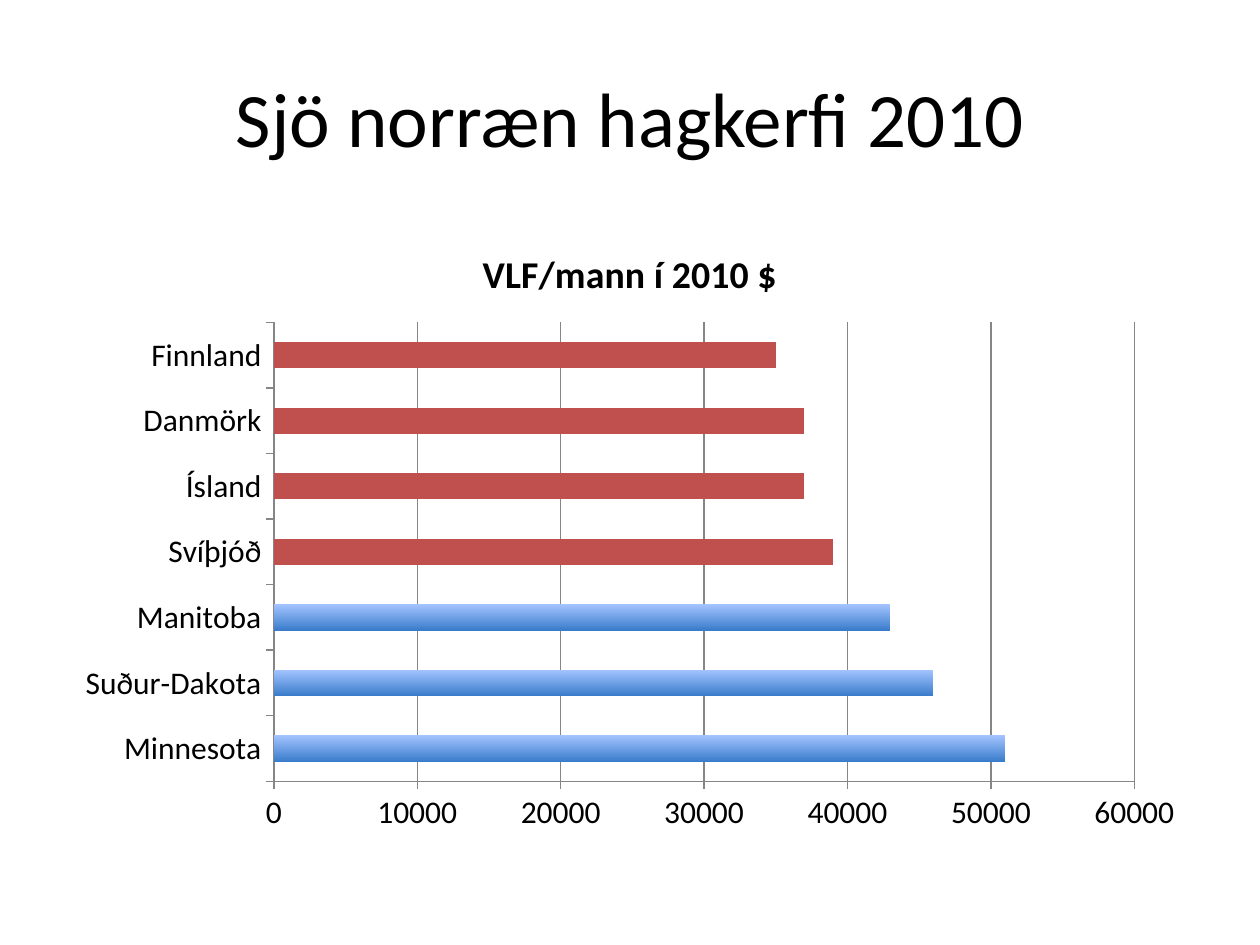
from pptx import Presentation
from pptx.chart.data import CategoryChartData
from pptx.dml.color import RGBColor
from pptx.enum.chart import XL_CHART_TYPE, XL_TICK_MARK
from pptx.enum.text import MSO_ANCHOR, PP_ALIGN
from pptx.util import Cm, Pt


def paint(color, code):
    color.rgb = RGBColor.from_string(code)


def write(frame, text, size=18, color="000000", align=PP_ALIGN.CENTER):
    frame.text = text
    para = frame.paragraphs[0]
    para.alignment = align
    font = para.runs[0].font
    font.name, font.size = "Calibri", Pt(size)
    paint(font.color, color)


deck = Presentation()
deck.slide_width, deck.slide_height = Cm(25.4), Cm(19.05)
slide = deck.slides.add_slide(deck.slide_layouts[5])

title = slide.shapes.title
title.left, title.top, title.width, title.height = Cm(1.27), Cm(0.76), Cm(22.86), Cm(3.18)
title.text_frame.vertical_anchor = MSO_ANCHOR.MIDDLE
write(title.text_frame, "Sjö norræn hagkerfi 2010", size=44)

income = {
    "Minnesota": 51000,
    "Suður-Dakota": 46000,
    "Manitoba": 43000,
    "Svíþjóð": 39000,
    "Ísland": 37000,
    "Danmörk": 37000,
    "Finnland": 35000,
}
data = CategoryChartData()
data.categories = list(income)
data.add_series("VLF/mann í 2010 $", list(income.values()))
chart = slide.shapes.add_chart(
    XL_CHART_TYPE.BAR_CLUSTERED, Cm(1.27), Cm(4.45), Cm(22.86), Cm(12.57), data
).chart
chart.font.name, chart.font.size = "Calibri", Pt(18)
paint(chart.font.color, "000000")
chart.has_legend = False
chart.has_title = True

scale = chart.value_axis
scale.minimum_scale, scale.maximum_scale, scale.major_unit = 0, 60000, 10000
scale.has_major_gridlines = True
scale.tick_labels.number_format = "General"
scale.tick_labels.number_format_is_linked = False
for axis in (chart.category_axis, scale):
    axis.major_tick_mark = XL_TICK_MARK.OUTSIDE
    axis.minor_tick_mark = XL_TICK_MARK.NONE
for line in (chart.category_axis.format.line, scale.format.line, scale.major_gridlines.format.line):
    line.width = Pt(0.75)
    paint(line.color, "868686")

plot = chart.plots[0]
plot.gap_width = 150
plot.vary_by_categories = False
bars = plot.series[0]
bars.invert_if_negative = False
fill = bars.format.fill
fill.gradient()
fill.gradient_angle = 270
for stop, code in zip(fill.gradient_stops, ("A3C4FF", "3A7CCB")):
    paint(stop.color, code)
for nation in range(3, len(income)):
    fill = bars.points[nation].format.fill
    fill.solid()
    paint(fill.fore_color, "C0504D")

deck.save("out.pptx")
